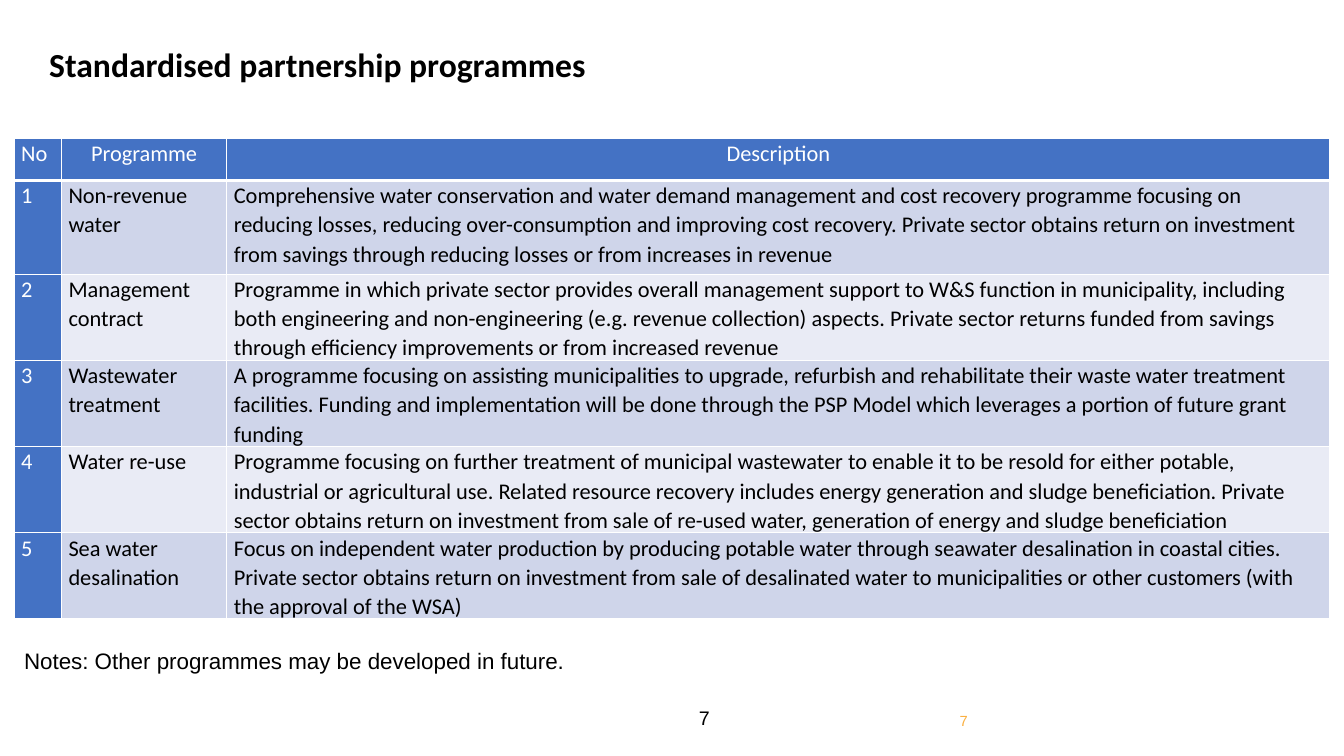
"""Build the slide on standardised partnership programmes."""
from dataclasses import dataclass
from typing import Any

from lxml import etree
from pptx import Presentation
from pptx import util as u
from pptx.dml import color
from pptx.enum import text
from pptx.oxml import ns


@dataclass(frozen=True)
class Theme:
    """Colours, fonts and type sizes."""
    black: str = "000000"
    white: str = "FFFFFF"
    blue: str = "4472C4"
    bands: tuple[str, str] = ("CFD5EA", "E9EBF5")
    gold: str = "FBB040"
    head: str = "Calibri"
    body: str = "Arial"
    title: float = 24
    main: float = 16
    page: float = 14
    small: float = 10.5


@dataclass(frozen=True)
class Style:
    """Format of one paragraph."""
    font: str
    size: float
    tint: str
    bold: bool = False
    align: Any = text.PP_ALIGN.LEFT
    space: float = 1.0


@dataclass(frozen=True)
class Label:
    """A text box with its place in inches."""
    words: str
    place: tuple[float, float, float, float]
    style: Style
    anchor: Any = text.MSO_ANCHOR.TOP


@dataclass(frozen=True)
class Scheme:
    """A programme and its description."""
    name: str
    about: str


T = Theme()
MID = text.MSO_ANCHOR.MIDDLE
CENTER = text.PP_ALIGN.CENTER
PLACE = (0.14, 1.37, 13.05, 4.73)
COLS = (0.47, 1.64, 10.94)
ROWS = (0.42, 0.93, 0.56, 0.56, 0.56, 0.81)
HEADS = ("No", "Programme", "Description")

LABELS = (
    Label("Standardised partnership programmes", (0.39, 0.41, 12.56, 0.51),
          Style(T.head, T.title, T.black, bold=True, space=0.9), MID),
    Label("7", (9.42, 6.95, 3, 0.4), Style(T.body, T.small, T.gold), MID),
    Label("Notes: Other programmes may be developed in future.",
          (0.14, 6.37, 11.71, 0.37), Style(T.body, T.main, T.black)),
    Label("7", (5.43, 6.95, 3.11, 0.4),
          Style(T.body, T.page, T.black, align=CENTER)),
)

SCHEMES = (
    Scheme("Non-revenue water",
           "Comprehensive water conservation and water demand management and "
           "cost recovery programme focusing on reducing losses, reducing "
           "over-consumption and improving cost recovery. Private sector "
           "obtains return on investment from savings through reducing losses "
           "or from increases in revenue"),
    Scheme("Management contract",
           "Programme in which private sector provides overall management "
           "support to W&S function in municipality, including both "
           "engineering and non-engineering (e.g. revenue collection) aspects. "
           "Private sector returns funded from savings through efficiency "
           "improvements or from increased revenue"),
    Scheme("Wastewater treatment",
           "A programme focusing on assisting municipalities to upgrade, "
           "refurbish and rehabilitate their waste water treatment facilities. "
           "Funding and implementation will be done through the PSP Model "
           "which leverages a portion of future grant funding"),
    Scheme("Water re-use",
           "Programme focusing on further treatment of municipal wastewater to "
           "enable it to be resold for either potable, industrial or "
           "agricultural use. Related resource recovery includes energy "
           "generation and sludge beneficiation. Private sector obtains return "
           "on investment from sale of re-used water, generation of energy and "
           "sludge beneficiation"),
    Scheme("Sea water desalination",
           "Focus on independent water production by producing potable water "
           "through seawater desalination in coastal cities. Private sector "
           "obtains return on investment from sale of desalinated water to "
           "municipalities or other customers (with the approval of the WSA)"),
)


def apply(item: Any, values: dict[str, Any]) -> None:
    """Set each named attribute of an item."""
    for name, value in values.items():
        setattr(item, name, value)


def write(frame: Any, words: str, style: Style) -> None:
    """Put one styled paragraph in a text frame."""
    para = frame.paragraphs[0]
    apply(para, {"alignment": style.align, "line_spacing": style.space})
    run = para.add_run()
    run.text = words
    apply(run.font, {"name": style.font, "size": u.Pt(style.size),
                     "bold": style.bold})
    run.font.color.rgb = color.RGBColor.from_string(style.tint)


def add_label(slide: Any, label: Label) -> None:
    """Draw one text box."""
    box = slide.shapes.add_textbox(*map(u.Inches, label.place))
    apply(box.text_frame, {"word_wrap": True, "vertical_anchor": label.anchor})
    write(box.text_frame, label.words, label.style)


def edge(cell: Any, base: float) -> None:
    """Give a cell white borders, with its own width at the base."""
    props = cell._tc.get_or_add_tcPr()
    widths = {"a:lnL": 1, "a:lnR": 1, "a:lnT": 1, "a:lnB": base}
    for spot, (tag, width) in enumerate(widths.items()):
        line = etree.Element(ns.qn(tag), w=str(u.Pt(width)))
        fill = etree.SubElement(line, ns.qn("a:solidFill"))
        etree.SubElement(fill, ns.qn("a:srgbClr"), val=T.white)
        props.insert(spot, line)


def add_cell(cell: Any, words: str, row: int, col: int) -> None:
    """Fill, border and write one cell by its place in the grid."""
    blue = row == 0 or col == 0
    fill = T.blue if blue else T.bands[(row - 1) % 2]
    apply(cell, {"margin_left": u.Inches(0.07), "margin_right": u.Inches(0.07),
                 "margin_top": 0, "margin_bottom": 0})
    cell.fill.solid()
    cell.fill.fore_color.rgb = color.RGBColor.from_string(fill)
    edge(cell, 3 if row == 0 else 1)
    align = CENTER if row == 0 and col else text.PP_ALIGN.LEFT
    write(cell.text_frame, words,
          Style(T.head, T.main, T.white if blue else T.black,
                align=align, space=1.07))


def add_grid(slide: Any) -> None:
    """Draw the table of programmes."""
    frame = slide.shapes.add_table(len(ROWS), len(COLS),
                                   *map(u.Inches, PLACE))
    table = frame.table
    for col, width in zip(table.columns, COLS):
        col.width = u.Inches(width)
    for row, height in zip(table.rows, ROWS):
        row.height = u.Inches(height)
    frame.height = u.Inches(PLACE[3])
    lines = [HEADS] + [(str(n), s.name, s.about)
                       for n, s in enumerate(SCHEMES, 1)]
    for row, line in enumerate(lines):
        for col, words in enumerate(line):
            add_cell(table.cell(row, col), words, row, col)


def main() -> None:
    """Build and save the deck."""
    deck = Presentation()
    apply(deck, {"slide_width": u.Inches(13.33),
                 "slide_height": u.Inches(7.5)})
    slide = deck.slides.add_slide(deck.slide_layouts[6])
    title, tag, note, page = LABELS
    add_label(slide, title)
    add_label(slide, tag)
    add_grid(slide)
    add_label(slide, note)
    add_label(slide, page)
    deck.save("out.pptx")


if __name__ == "__main__":
    main()
